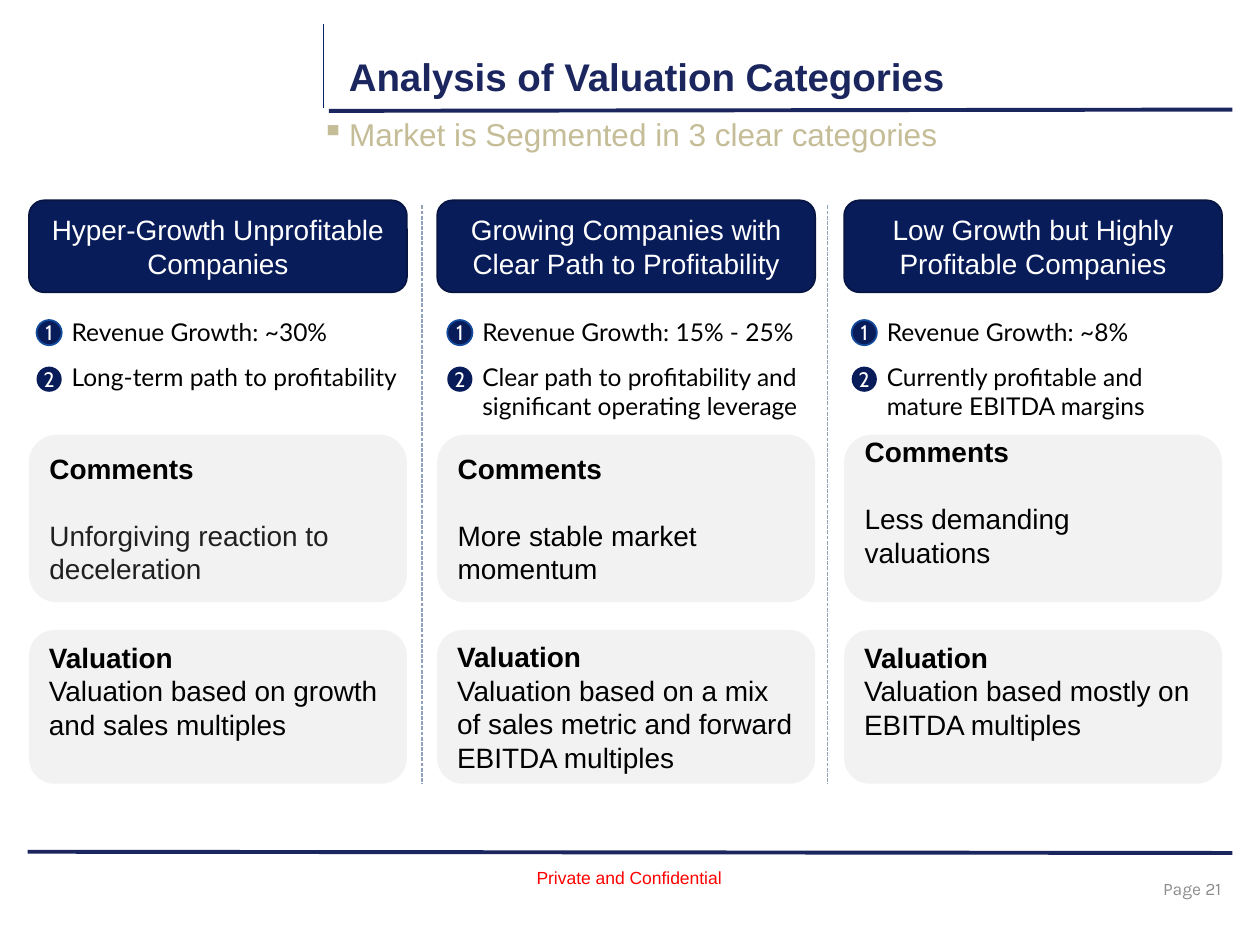
"""Build the valuation categories slide."""
from lxml.etree import SubElement
from pptx import Presentation
from pptx.dml.color import RGBColor
from pptx.enum.dml import MSO_LINE
from pptx.enum.shapes import MSO_CONNECTOR, MSO_SHAPE
from pptx.enum.text import MSO_ANCHOR, PP_ALIGN
from pptx.oxml.ns import qn
from pptx.util import Emu, Pt

PX = 9144
COLORS = {
    "rule": "1B265F", "thin_rule": "002368", "divider": "91A2B9",
    "navy": "091C5A", "navy_edge": "071543", "badge_edge": "134B9D",
    "card": "F2F2F2", "black": "000000", "soft_black": "202020",
    "white": "FFFFFF", "tan": "C4BD97", "gray": "8C8C8C", "red": "FF0000",
}
COLUMNS = [
    {
        "left": 23, "badge": 29, "list_width": 286,
        "header": "Hyper-Growth Unprofitable Companies",
        "traits": ["Revenue Growth: ~30%", "Long-term path to profitability"],
        "comment": "Unforgiving reaction to deceleration",
        "comment_color": "soft_black", "comment_inset": 5,
        "valuation": "Valuation based on growth and sales multiples",
        "valuation_inset": 31,
    },
    {
        "left": 347, "badge": 355, "list_width": 273,
        "header": "Growing Companies with Clear Path to Profitability",
        "traits": ["Revenue Growth: 15% - 25%",
                   "Clear path to profitability and significant operating leverage"],
        "comment": "More stable market momentum",
        "comment_color": "black", "comment_inset": 5,
        "valuation": "Valuation based on a mix of sales metric and forward EBITDA multiples",
        "valuation_inset": 5,
    },
    {
        "left": 670, "badge": 676, "list_width": 267,
        "header": "Low Growth but Highly Profitable Companies",
        "traits": ["Revenue Growth: ~8%",
                   "Currently profitable and mature EBITDA margins"],
        "comment": "Less demanding valuations",
        "comment_color": "black", "comment_inset": 31,
        "valuation": "Valuation based mostly on EBITDA multiples",
        "valuation_inset": 31,
    },
]


class SlideBuilder:
    """Hold the style and the current page, and draw each kind of element."""

    def __init__(self, page):
        self.page = page

    def color(self, name):
        return RGBColor.from_string(COLORS[name])

    def lengths(self, *values):
        return [Emu(value * PX) for value in values]

    def style(self, para, size, color, font="Arial", bold=False, align=PP_ALIGN.LEFT):
        para.alignment = align
        para.font.size = Pt(size)
        para.font.name = font
        para.font.bold = bold
        para.font.color.rgb = self.color(color)

    def insets(self, frame, left, top, right, bottom):
        (frame.margin_left, frame.margin_top,
         frame.margin_right, frame.margin_bottom) = self.lengths(left, top, right, bottom)

    def line(self, start, end, color, width, dashed=False):
        connector = self.page.shapes.add_connector(
            MSO_CONNECTOR.STRAIGHT, *self.lengths(*start, *end))
        connector.line.color.rgb = self.color(color)
        connector.line.width = Pt(width)
        if dashed:
            connector.line.dash_style = MSO_LINE.SQUARE_DOT
        SubElement(connector._element.spPr, qn("a:effectLst"))

    def text(self, place, content, size, color, wrap=True, anchor=MSO_ANCHOR.TOP, **style):
        box = self.page.shapes.add_textbox(*self.lengths(*place))
        frame = box.text_frame
        frame.word_wrap = wrap
        frame.vertical_anchor = anchor
        para = frame.paragraphs[0]
        para.text = content
        self.style(para, size, color, **style)
        return frame

    def bullet_line(self, place, content, size, color):
        frame = self.text(place, content, size, color,
                          anchor=MSO_ANCHOR.MIDDLE, align=PP_ALIGN.CENTER)
        self.insets(frame, 0, 0, 0, 0)
        properties = frame.paragraphs[0]._p.get_or_add_pPr()
        properties.set("marL", str(22 * PX))
        properties.set("indent", str(-22 * PX))
        bullet = properties.makeelement(qn("a:buChar"), {"char": "▪"})
        properties.insert(0, bullet)

    def shape(self, kind, place, fill, edge=None):
        shape = self.page.shapes.add_shape(kind, *self.lengths(*place))
        shape.shadow.inherit = False
        shape.fill.solid()
        shape.fill.fore_color.rgb = self.color(fill)
        if edge:
            shape.line.color.rgb = self.color(edge)
            shape.line.width = Pt(1)
        else:
            shape.line.fill.background()
        shape.text_frame.word_wrap = True
        shape.text_frame.vertical_anchor = MSO_ANCHOR.MIDDLE
        return shape.text_frame

    def header(self, place, content):
        frame = self.shape(MSO_SHAPE.ROUNDED_RECTANGLE, place, "navy", "navy_edge")
        frame.text = content
        self.style(frame.paragraphs[0], 16, "white", align=PP_ALIGN.CENTER)

    def badge(self, left, top, number, edge):
        frame = self.shape(MSO_SHAPE.OVAL, (left, top, 20, 20), "navy", edge)
        frame.word_wrap = False
        self.insets(frame, 5, 5, 5, 5)
        frame.text = number
        self.style(frame.paragraphs[0], 12, "white", font="Cabin", align=PP_ALIGN.CENTER)

    def traits(self, left, width, items):
        frame = self.text((left + 18, 247, width, 88), items[0], 14, "black", font="Lato")
        for item in items[1:]:
            para = frame.add_paragraph()
            para.text = item
            para.space_before = Pt(8.4)
            self.style(para, 14, "black", font="Lato")
        self.badge(left, 254, "1", "badge_edge")
        self.badge(left, 291, "2", None)

    def card(self, place, heading, body, bottom_inset, gap=0, body_color="black"):
        frame = self.shape(MSO_SHAPE.ROUNDED_RECTANGLE, place, "card")
        self.insets(frame, 10, 5, 10, bottom_inset)
        frame.text = heading
        self.style(frame.paragraphs[0], 16, "black", bold=True)
        para = frame.add_paragraph()
        para.text = body
        para.space_before = Pt(gap)
        self.style(para, 16, body_color)


def main():
    deck = Presentation()
    deck.slide_width, deck.slide_height = Emu(1000 * PX), Emu(750 * PX)
    builder = SlideBuilder(deck.slides.add_slide(deck.slide_layouts[6]))

    builder.line((22, 676), (978, 677), "rule", 2.25)
    builder.line((261, 88), (978, 87), "rule", 2.25)
    builder.line((257, 19), (257, 86), "thin_rule", 0.75)
    builder.text((749, 685, 230, 40), "Page 21", 10, "gray", font="Karla",
                 anchor=MSO_ANCHOR.MIDDLE, align=PP_ALIGN.RIGHT)
    builder.text((416, 683, 168, 27), "Private and Confidential", 10, "red", wrap=False)
    builder.text((267, 37, 708, 38), "Analysis of Valuation Categories", 22, "rule", bold=True)
    builder.bullet_line((24, 80, 951, 53), "Market is Segmented in 3 clear categories", 18, "tan")

    for column in COLUMNS:
        left = column["left"]
        builder.header((left, 159, 300, 73), column["header"])
        builder.traits(column["badge"], column["list_width"], column["traits"])
        builder.card((left, 345, 300, 133), "Comments", column["comment"],
                     column["comment_inset"], gap=19, body_color=column["comment_color"])
        builder.card((left, 500, 300, 122), "Valuation", column["valuation"],
                     column["valuation_inset"])

    for divider in (335, 657):
        builder.line((divider, 163), (divider, 622), "divider", 0.75, dashed=True)

    deck.save("out.pptx")


if __name__ == "__main__":
    main()
